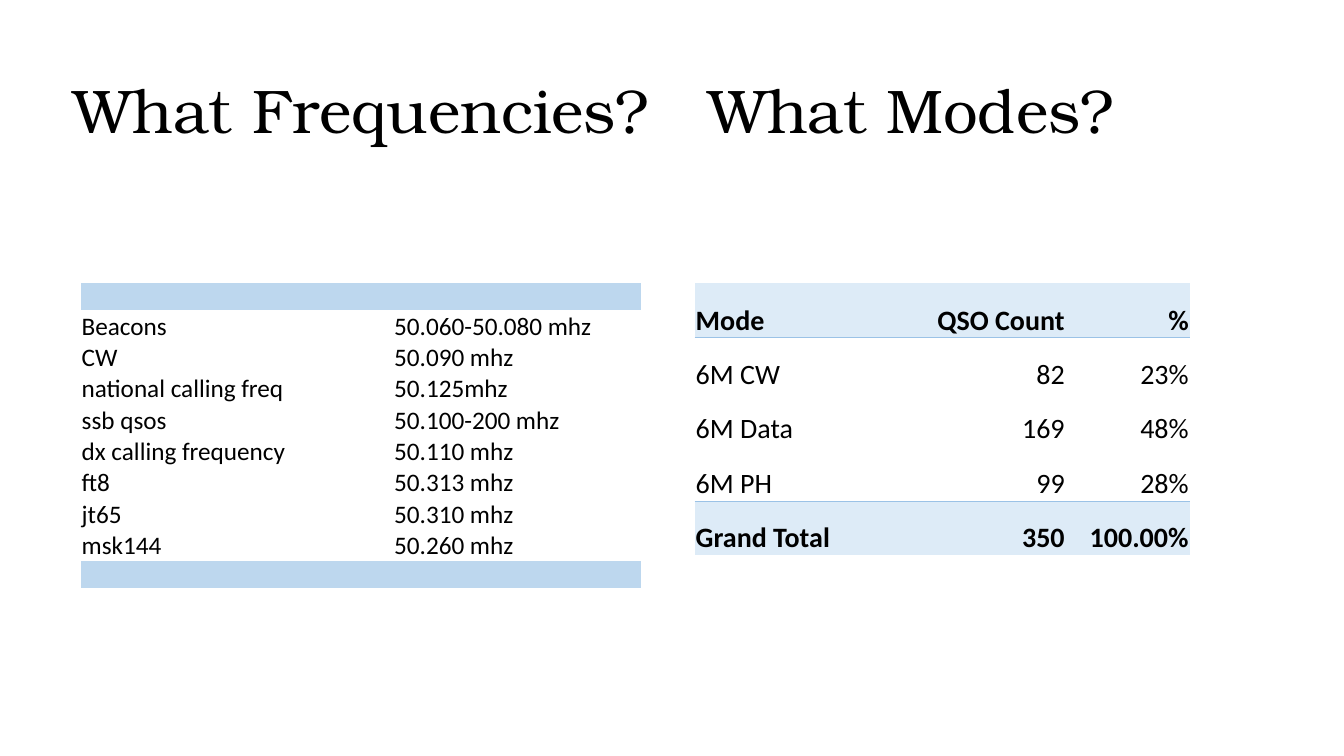
import lxml.etree
import pptx
import pptx.dml.color
import pptx.enum.text
import pptx.oxml.ns
import pptx.util

Inches = pptx.util.Inches
Pt = pptx.util.Pt
qn = pptx.oxml.ns.qn
ALIGN = pptx.enum.text.PP_ALIGN
ANCHOR = pptx.enum.text.MSO_ANCHOR

NO_STYLE = "{2D5ABB26-0587-4C30-8999-92F81FD0307C}"
FREQUENCIES = [
    ("Beacons", "50.060-50.080 mhz"),
    ("CW", "50.090 mhz"),
    ("national calling freq", "50.125mhz"),
    ("ssb qsos", "50.100-200 mhz"),
    ("dx calling frequency", "50.110 mhz"),
    ("ft8", "50.313 mhz"),
    ("jt65", "50.310 mhz"),
    ("msk144", "50.260 mhz"),
]
MERGED_LABELS = ("national calling freq", "dx calling frequency")
MODES = [
    ("Mode", "QSO Count", "%"),
    ("6M CW", "82", "23%"),
    ("6M Data", "169", "48%"),
    ("6M PH", "99", "28%"),
    ("Grand Total", "350", "100.00%"),
]


def rgb(value):
    """Turn a hex string into a colour."""
    return pptx.dml.color.RGBColor.from_string(value)


def format_run(r, size, font, bold=False):
    """Give a run its font in black."""
    r.font.size = Pt(size)
    r.font.name = font
    r.font.bold = bold
    r.font.color.rgb = rgb("000000")


def add_plain_table(slide, box, widths, row_count):
    """Add a table without style, banding or header format."""
    left, top, width, height = box
    frame = slide.shapes.add_table(
        row_count, len(widths), Inches(left), Inches(top), Inches(width), Inches(height))
    table = frame.table
    table.first_row = False
    table.horz_banding = False
    table._tbl.tblPr.find(qn("a:tableStyleId")).text = NO_STYLE
    for column, column_width in zip(table.columns, widths):
        column.width = Inches(column_width)
    return table


def add_border(cell, tag):
    """Draw a thin blue line on one side of a cell."""
    ln = lxml.etree.SubElement(cell._tc.get_or_add_tcPr(), qn(tag), w=str(Pt(0.5)))
    fill = lxml.etree.SubElement(ln, qn("a:solidFill"))
    lxml.etree.SubElement(fill, qn("a:srgbClr"), val="9BC2E6")


def fill_cell(cell, text, size, align=ALIGN.LEFT, bold=False, fill=None):
    """Set the text, margins and fill of a cell."""
    cell.margin_left = cell.margin_right = cell.margin_top = Inches(0.01)
    cell.margin_bottom = 0
    cell.vertical_anchor = ANCHOR.BOTTOM
    p = cell.text_frame.paragraphs[0]
    p.alignment = align
    if text:
        p.text = text
        format_run(p.runs[0], size, "Calibri", bold)
    else:
        lxml.etree.SubElement(p._p, qn("a:endParaRPr"), sz="1200")
    if fill:
        cell.fill.solid()
        cell.fill.fore_color.rgb = rgb(fill)
    else:
        cell.fill.background()


def add_title(slide, box, text):
    """Add the slide heading."""
    sp = slide.shapes.add_textbox(*map(Inches, box))
    tf = sp.text_frame
    tf.word_wrap = True
    tf.vertical_anchor = ANCHOR.MIDDLE
    p = tf.paragraphs[0]
    p.text = text
    p.line_spacing = 0.9
    format_run(p.runs[0], 44, "TeX Gyre Bonum")


def add_frequency_table(slide, box):
    """Add the frequency list between two blue bands."""
    band = ("", "", "", "")
    rows = [band] + [(label, "", "", freq) for label, freq in FREQUENCIES] + [band]
    table = add_plain_table(slide, box, (1.03, 1.04, 1.03, 2.46), len(rows))
    for i, values in enumerate(rows):
        table.rows[i].height = Inches(0.27 if values == band else 0.31)
        for j, text in enumerate(values):
            fill_cell(table.cell(i, j), text, 18, fill="BDD7EE" if values == band else None)
        if values[0] in MERGED_LABELS:
            table.cell(i, 0).merge(table.cell(i, 2))


def add_mode_table(slide, box):
    """Add the contact counts by mode with header and total rows."""
    table = add_plain_table(slide, box, (1.85, 1.83, 1.23), len(MODES))
    last = len(MODES) - 1
    for i, values in enumerate(MODES):
        outer = i in (0, last)
        for j, text in enumerate(values):
            cell = table.cell(i, j)
            if outer:
                add_border(cell, "a:lnT" if i else "a:lnB")
            fill_cell(cell, text, 20, ALIGN.RIGHT if j else ALIGN.LEFT, outer,
                      "DDEBF7" if outer else None)


def main():
    """Build and save the slide."""
    prs = pptx.Presentation()
    prs.slide_width = Inches(13.33)
    prs.slide_height = Inches(7.5)
    slide = prs.slides.add_slide(prs.slide_layouts[6])
    add_title(slide, (0.63, 0.4, 11.78, 1.45), "What Frequencies?   What Modes?")
    add_mode_table(slide, (6.89, 2.81, 4.91, 2.7))
    add_frequency_table(slide, (0.8, 2.81, 5.56, 3.02))
    prs.save("out.pptx")


if __name__ == "__main__":
    main()
